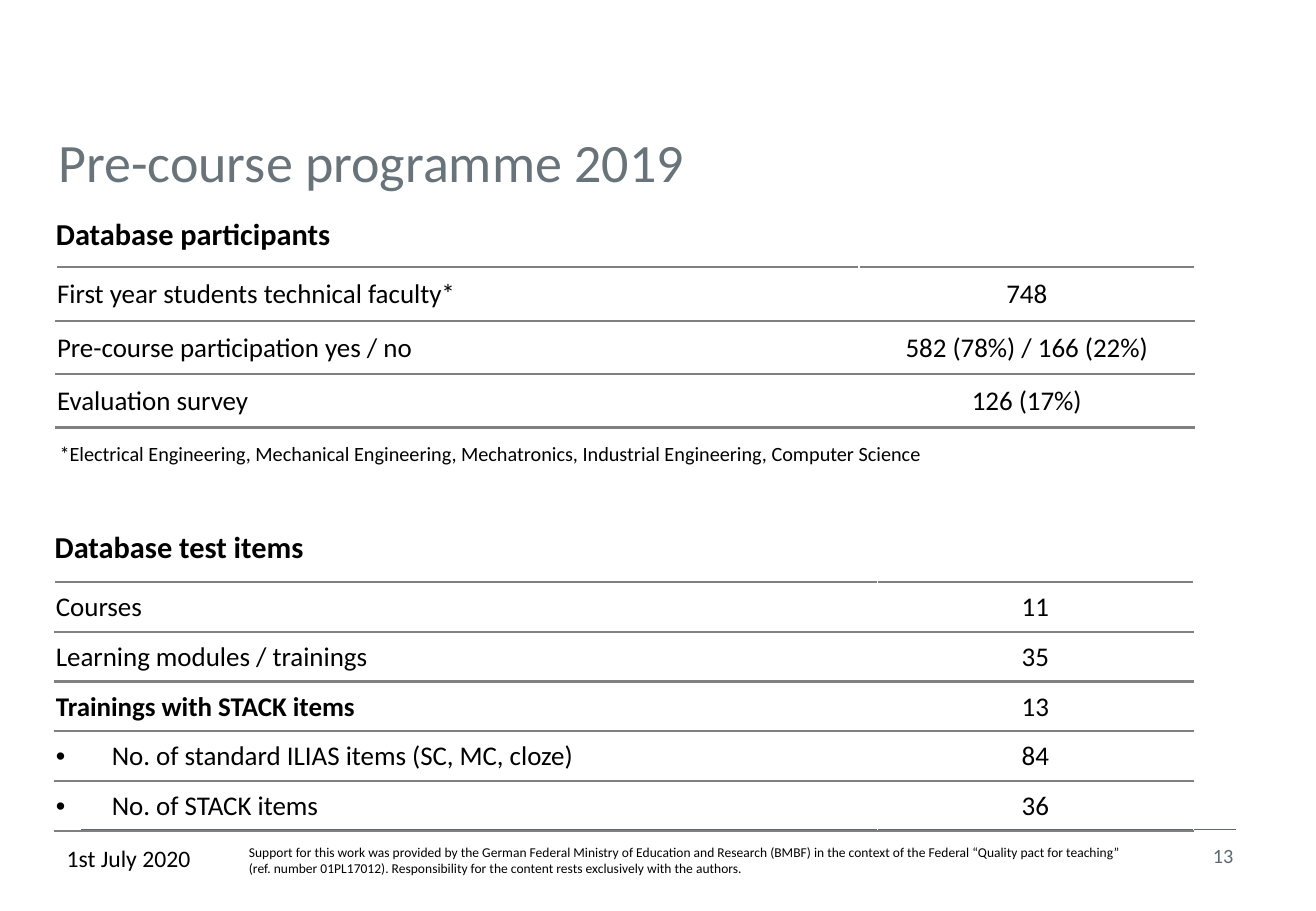
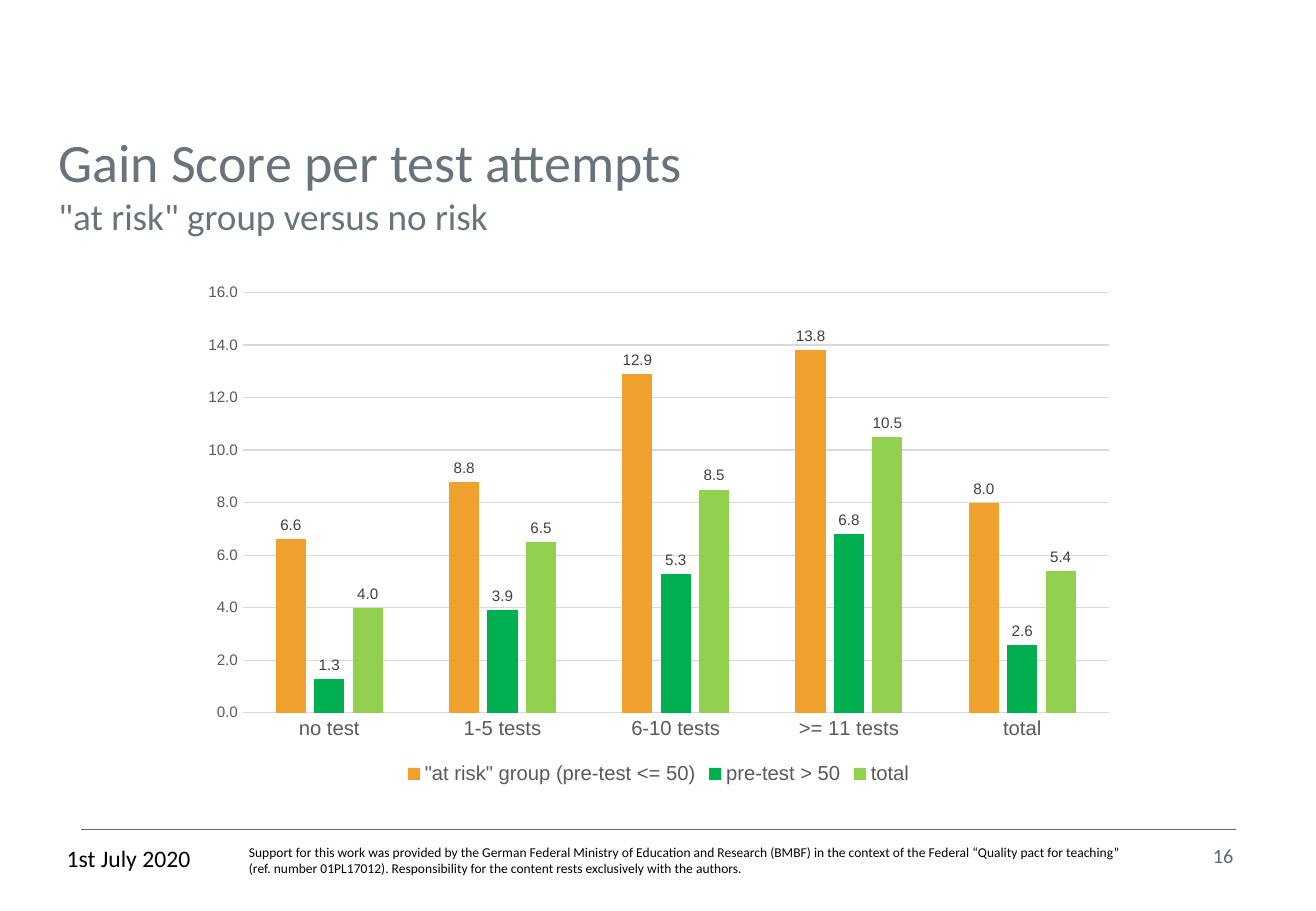
from lxml import etree
from pptx import Presentation
from pptx.chart.data import CategoryChartData
from pptx.dml.color import RGBColor
from pptx.enum.chart import XL_CHART_TYPE, XL_LABEL_POSITION, XL_LEGEND_POSITION, XL_TICK_MARK
from pptx.enum.shapes import MSO_CONNECTOR
from pptx.enum.text import MSO_ANCHOR, MSO_AUTO_SIZE, PP_ALIGN
from pptx.oxml.ns import qn
from pptx.util import Inches, Pt

CLUSTERED = XL_CHART_TYPE.COLUMN_CLUSTERED
OUTSIDE_END = XL_LABEL_POSITION.OUTSIDE_END
BOTTOM = XL_LEGEND_POSITION.BOTTOM
NO_TICK = XL_TICK_MARK.NONE
STRAIGHT = MSO_CONNECTOR.STRAIGHT
TOP, MIDDLE = MSO_ANCHOR.TOP, MSO_ANCHOR.MIDDLE
NO_FIT = MSO_AUTO_SIZE.NONE
LEFT, CENTER, RIGHT = PP_ALIGN.LEFT, PP_ALIGN.CENTER, PP_ALIGN.RIGHT

TITLE_ONLY = 5
BLACK, SLATE, FOOT_GREY = "000000", "68737A", "5C6971"
RULE_GREY, GRID_GREY, AXIS_GREY, LABEL_GREY = "808080", "D9D9D9", "595959", "404040"
SUPPORT = (
    "Support for this work was provided by the German Federal Ministry of Education and "
    "Research (BMBF) in the context of the Federal “Quality pact for teaching” (ref. number "
    "01PL17012). Responsibility for the content rests exclusively with the authors."
)


def rgb(color):
    """Turn a hex string into a colour."""
    return RGBColor.from_string(color)


def set_font(font, size, color=BLACK, name="Calibri", bold=False):
    """Format any font object."""
    font.size, font.name, font.bold = Pt(size), name, bold
    font.color.rgb = rgb(color)


def add_text(p, text, align=LEFT, bullet=False, **style):
    """Write one formatted run into a paragraph."""
    p.alignment = align
    if bullet:
        pPr = p._p.get_or_add_pPr()
        pPr.set("marL", str(Inches(0.46)))
        pPr.set("indent", str(-Inches(0.46)))
        etree.SubElement(pPr, qn("a:buFont"), typeface="Arial")
        etree.SubElement(pPr, qn("a:buChar"), char="•")
    r = p.add_run()
    r.text = text
    set_font(r.font, **style)


def rule_cell(cell):
    """Draw the top and bottom borders of a table cell."""
    tcPr = cell._tc.get_or_add_tcPr()
    for tag in ("a:lnT", "a:lnB"):
        ln = etree.SubElement(tcPr, qn(tag), w=str(Pt(1.5)))
        fill = etree.SubElement(ln, qn("a:solidFill"))
        etree.SubElement(fill, qn("a:srgbClr"), val=RULE_GREY)


class Deck:
    """Hold the presentation, its style and the current slide."""

    def __init__(self):
        """Start an empty presentation."""
        self.prs = Presentation()
        self.prs.slide_width, self.prs.slide_height = Inches(10.83), Inches(7.5)
        self.s = None

    def slide(self, number, title, subtitle=None):
        """Add a slide with its title and footer."""
        self.s = self.prs.slides.add_slide(self.prs.slide_layouts[TITLE_ONLY])
        self.line(0.67, 6.83, 10.17)
        self.text(SUPPORT, 1.95, 6.9, 7.4, 0.39, inset=True, size=8)
        self.text("1st July 2020", 0.45, 6.9, 1.46, 0.5, inset=True, size=14)
        self.text(number, 9.38, 6.89, 0.87, 0.5, inset=True, align=RIGHT, size=12, color=FOOT_GREY)
        sp = self.s.shapes.title
        sp.left, sp.top, sp.width, sp.height = map(Inches, (0.48, 1.06, 7.95, 0.64))
        tf = self.frame(sp)
        add_text(tf.paragraphs[0], title, size=32, color=SLATE)
        if subtitle:
            add_text(tf.add_paragraph(), subtitle, size=22, color=SLATE)

    def frame(self, sp, inset=False):
        """Prepare the text frame of a shape."""
        tf = sp.text_frame
        tf.word_wrap, tf.auto_size, tf.vertical_anchor = True, NO_FIT, TOP
        if not inset:
            tf.margin_left = tf.margin_right = tf.margin_top = tf.margin_bottom = 0
        return tf

    def text(self, text, x, y, w, h, inset=False, **style):
        """Add a text box."""
        sp = self.s.shapes.add_textbox(*map(Inches, (x, y, w, h)))
        add_text(self.frame(sp, inset).paragraphs[0], text, **style)

    def line(self, x, y, x_end):
        """Add a thin horizontal line."""
        sp = self.s.shapes.add_connector(STRAIGHT, *map(Inches, (x, y, x_end, y)))
        sp.line.color.rgb, sp.line.width = rgb(FOOT_GREY), Pt(0.25)
        etree.SubElement(sp._element.spPr, qn("a:effectLst"))

    def table(self, rows, x, y, widths, row_height):
        """Add a ruled table of (label, value, label style) rows."""
        sp = self.s.shapes.add_table(
            len(rows), 2, *map(Inches, (x, y, sum(widths), row_height * len(rows)))
        )
        table = sp.table
        table.first_row = table.horz_banding = False
        for column, width in zip(table.columns, widths):
            column.width = Inches(width)
        for i, (label, value, style) in enumerate(rows):
            table.rows[i].height = Inches(row_height)
            for j, (text, fmt) in enumerate([(label, style), (value, {"align": CENTER})]):
                cell = table.cell(i, j)
                cell.margin_left = cell.margin_right = cell.margin_top = Inches(0.01)
                cell.margin_bottom = 0
                cell.vertical_anchor = MIDDLE
                rule_cell(cell)
                cell.fill.background()
                add_text(cell.text_frame.paragraphs[0], text, size=16, **fmt)

    def chart(self, categories, series, x, y, w, h):
        """Add a clustered column chart of (name, colour, values) series."""
        data = CategoryChartData(number_format="0.0")
        data.categories = categories
        for name, _, values in series:
            data.add_series(name, values)
        chart = self.s.shapes.add_chart(CLUSTERED, *map(Inches, (x, y, w, h)), data).chart
        set_font(chart.font, 10, name="Arial")
        chart.has_title = False
        chart.has_legend = True
        chart.legend.position, chart.legend.include_in_layout = BOTTOM, False
        set_font(chart.legend.font, 12, AXIS_GREY, "Arial")
        cat, val = chart.category_axis, chart.value_axis
        for axis, size in ((cat, 12), (val, 9)):
            axis.major_tick_mark = axis.minor_tick_mark = NO_TICK
            set_font(axis.tick_labels.font, size, AXIS_GREY, "Arial")
        val.minimum_scale, val.maximum_scale, val.major_unit = 0, 16, 2
        val.tick_labels.number_format = "0.0"
        val.tick_labels.number_format_is_linked = False
        val.format.line.fill.background()
        for line in (cat.format.line, val.major_gridlines.format.line):
            line.color.rgb, line.width = rgb(GRID_GREY), Pt(0.75)
        plot = chart.plots[0]
        plot.gap_width, plot.overlap, plot.vary_by_categories = 219, -27, False
        for ser, (_, color, _) in zip(plot.series, series):
            ser.format.fill.solid()
            ser.format.fill.fore_color.rgb = rgb(color)
            labels = ser.data_labels
            labels.show_value, labels.position = True, OUTSIDE_END
            labels.number_format, labels.number_format_is_linked = "0.0", False
            set_font(labels.font, 9, LABEL_GREY, "Arial")


def main():
    """Build both slides."""
    deck = Deck()
    deck.slide("13", "Pre-course programme 2019")
    deck.text("Database participants", 0.46, 1.77, 7.95, 0.4, size=18, bold=True)
    participants = [
        ("First year students technical faculty*", "748", {}),
        ("Pre-course participation yes / no", "582 (78%) / 166 (22%)", {}),
        ("Evaluation survey", "126 (17%)", {}),
    ]
    deck.table(participants, 0.46, 2.2, (6.61, 2.76), 0.44)
    deck.text(
        "*Electrical Engineering, Mechanical Engineering, Mechatronics, "
        "Industrial Engineering, Computer Science",
        0.49, 3.63, 7.95, 0.28, size=12,
    )
    deck.text("Database test items", 0.45, 4.35, 7.95, 0.4, size=18, bold=True)
    test_items = [
        ("Courses", "11", {}),
        ("Learning modules / trainings", "35", {}),
        ("Trainings with STACK items", "13", {"bold": True}),
        ("No. of standard ILIAS items (SC, MC, cloze)", "84", {"bullet": True}),
        ("No. of STACK items", "36", {"bullet": True}),
    ]
    deck.table(test_items, 0.45, 4.79, (6.77, 2.6), 0.41)

    deck.slide("16", "Gain Score per test attempts", '"at risk" group versus no risk')
    gains = [
        ('"at risk" group (pre-test <= 50)', "EFA02D", (6.6, 8.8, 12.9, 13.8, 8)),
        ("pre-test > 50", "00B050", (1.3, 3.9, 5.3, 6.8, 2.6)),
        ("total", "92D050", (4, 6.5, 8.5, 10.5, 5.4)),
    ]
    attempts = ["no test", "1-5 tests", "6-10 tests", ">= 11 tests", "total"]
    deck.chart(attempts, gains, 1.56, 2.25, 7.72, 4.25)
    deck.prs.save("out.pptx")


if __name__ == "__main__":
    main()
